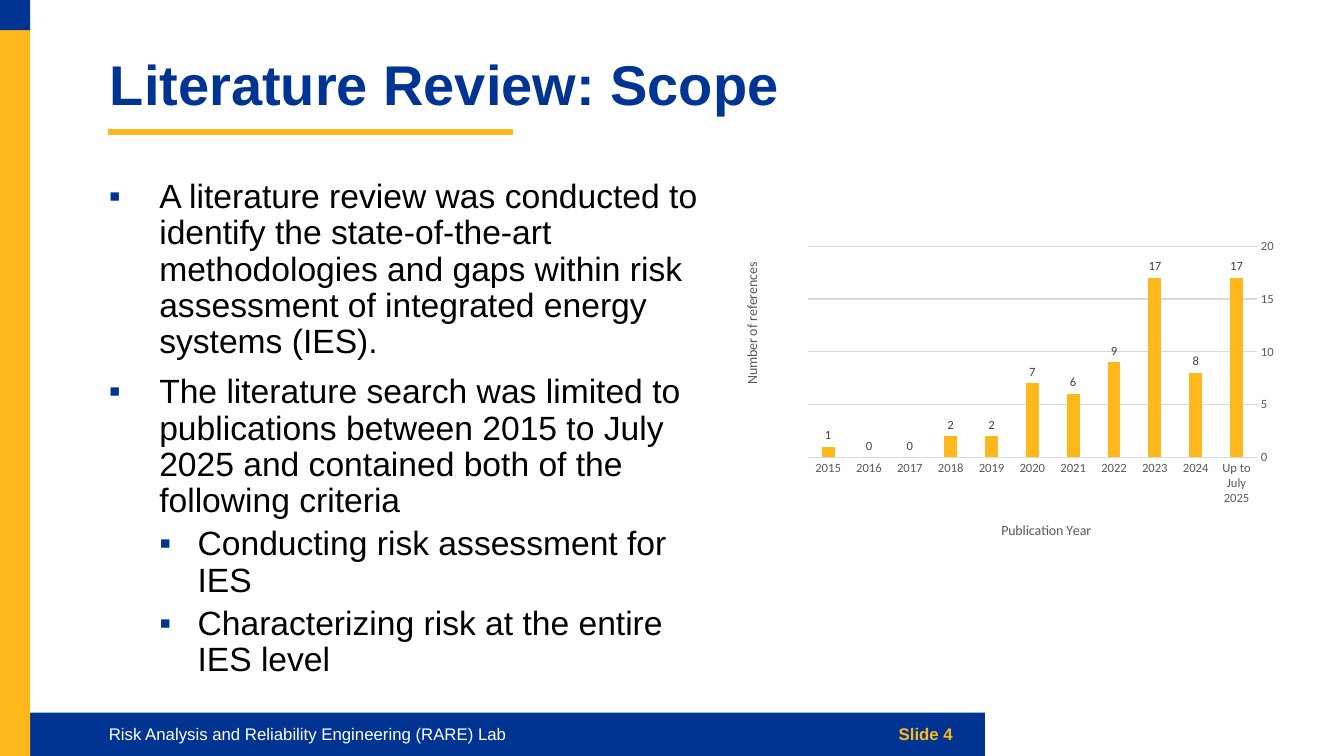
import pptx
import pptx.chart.data
import pptx.dml.color
import pptx.enum.chart
import pptx.enum.shapes
import pptx.enum.text
import pptx.oxml
import pptx.oxml.ns
import pptx.util
from pptx.util import Inches, Pt

RGBColor = pptx.dml.color.RGBColor
BLUE = RGBColor(0x00, 0x34, 0x93)
GOLD = RGBColor(0xFF, 0xB8, 0x1C)
WHITE = RGBColor(0xFF, 0xFF, 0xFF)
BLACK = RGBColor(0x00, 0x00, 0x00)
GREY = RGBColor(0x59, 0x59, 0x59)
LABEL_GREY = RGBColor(0x40, 0x40, 0x40)
GRID_GREY = RGBColor(0xD9, 0xD9, 0xD9)

TITLE = "Literature Review: Scope"
LAB = "Risk Analysis and Reliability Engineering (RARE) Lab"
SLIDE_LABEL = "Slide 4"
BULLETS = [
    (0, "A literature review was conducted to identify the state-of-the-art methodologies "
        "and gaps within risk assessment of integrated energy systems (IES)."),
    (0, "The literature search was limited to publications between 2015 to July 2025 "
        "and contained both of the following criteria"),
    (1, "Conducting risk assessment for IES"),
    (1, "Characterizing risk at the entire IES level"),
]
INDENTS = [(0.5, -0.5, 10), (0.88, -0.38, 5)]
REFERENCES = [
    ("Up to July 2025", 17), ("2024", 8), ("2023", 17), ("2022", 9), ("2021", 6), ("2020", 7),
    ("2019", 2), ("2018", 2), ("2017", 0), ("2016", 0), ("2015", 1),
]
BANDS = [
    (0.3, 7.07, 9.47, 0.43, BLUE),
    (0, 0.3, 0.3, 7.2, GOLD),
    (0, 0, 0.3, 0.3, BLUE),
]


def add_xml(parent, tag, **attrs):
    child = pptx.oxml.parse_xml(f"<{tag} {pptx.oxml.ns.nsdecls(tag.split(':')[0])}/>")
    for name, value in attrs.items():
        child.set(name, str(value))
    parent.append(child)
    return child


def set_font(font, size, color, name="Arial", bold=False):
    font.size = Pt(size)
    font.name = name
    font.bold = bold
    font.color.rgb = color


def place(shape, left, top, width, height):
    shape.left, shape.top = Inches(left), Inches(top)
    shape.width, shape.height = Inches(width), Inches(height)


def set_frame(tf, anchor, side, edge):
    tf.word_wrap = True
    tf.auto_size = pptx.enum.text.MSO_AUTO_SIZE.NONE
    tf.vertical_anchor = anchor
    tf.margin_left = tf.margin_right = Inches(side)
    tf.margin_top = tf.margin_bottom = Inches(edge)


def set_layout(parent, inner=False, **fractions):
    layout = parent.find(pptx.oxml.ns.qn("c:layout"))
    if layout is None:
        layout = add_xml(parent, "c:layout")
        parent.insert(0, layout)
    for child in list(layout):
        layout.remove(child)
    manual = add_xml(layout, "c:manualLayout")
    if inner:
        add_xml(manual, "c:layoutTarget", val="inner")
    for mode in ("c:xMode", "c:yMode"):
        add_xml(manual, mode, val="edge")
    for key, value in fractions.items():
        add_xml(manual, f"c:{key}", val=value)


def add_label(s, text, box, size, color, align, side, edge, bold=False):
    tf = s.shapes.add_textbox(*map(Inches, box)).text_frame
    set_frame(tf, pptx.enum.text.MSO_ANCHOR.MIDDLE, side, edge)
    p = tf.paragraphs[0]
    p.text = text
    p.alignment = align
    set_font(p.runs[0].font, size, color, bold=bold)


def add_bands(s):
    for left, top, width, height, color in BANDS:
        sp = s.shapes.add_shape(pptx.enum.shapes.MSO_SHAPE.RECTANGLE,
                                *map(Inches, (left, top, width, height)))
        sp.shadow.inherit = False
        sp.fill.solid()
        sp.fill.fore_color.rgb = color
        sp.line.fill.background()
    rule = s.shapes.add_connector(pptx.enum.shapes.MSO_CONNECTOR.STRAIGHT,
                                  *map(Inches, (1.07, 1.31, 5.09, 1.31)))
    rule.line.color.rgb = GOLD
    rule.line.width = Pt(4)
    add_xml(rule._element.spPr, "a:effectLst")


def add_title(s):
    place(s.shapes.title, 1.09, 0.52, 11.76, 0.78)
    tf = s.shapes.title.text_frame
    set_frame(tf, pptx.enum.text.MSO_ANCHOR.TOP, 0, 0.05)
    p = tf.paragraphs[0]
    p.text = TITLE
    p.alignment = pptx.enum.text.PP_ALIGN.LEFT
    p.line_spacing = 0.9
    set_font(p.runs[0].font, 40, BLUE, bold=True)


def add_bullets(s):
    body = s.placeholders[1]
    place(body, 1.08, 1.73, 5.89, 5.1)
    tf = body.text_frame
    set_frame(tf, pptx.enum.text.MSO_ANCHOR.TOP, 0, 0.05)
    for i, (level, text) in enumerate(BULLETS):
        p = tf.add_paragraph() if i else tf.paragraphs[0]
        p.text = text
        p.level = level
        margin, indent, before = INDENTS[level]
        pPr = p._p.get_or_add_pPr()
        pPr.set("marL", str(Inches(margin)))
        pPr.set("indent", str(Inches(indent)))
        add_xml(add_xml(pPr, "a:buClr"), "a:srgbClr", val=BLUE)
        add_xml(pPr, "a:buFont", typeface="Arial")
        add_xml(pPr, "a:buChar", char="▪")
        p.line_spacing = 0.9
        p.space_before = Pt(before if i else 0)
        set_font(p.runs[0].font, 24, BLACK)


def format_axis(axis, title, x, y):
    axis.major_tick_mark = axis.minor_tick_mark = pptx.enum.chart.XL_TICK_MARK.NONE
    set_font(axis.tick_labels.font, 9, GREY, "Calibri")
    tf = axis.axis_title.text_frame
    tf.text = title
    set_font(tf.paragraphs[0].runs[0].font, 10, GREY, "Calibri")
    set_layout(axis.axis_title._element, x=x, y=y)


def add_chart(s):
    data = pptx.chart.data.CategoryChartData()
    data.categories = [year for year, count in REFERENCES]
    data.add_series("Series 1", [count for year, count in REFERENCES])
    chart = s.shapes.add_chart(pptx.enum.chart.XL_CHART_TYPE.COLUMN_CLUSTERED,
                               *map(Inches, (7.12, 2.24, 5.57, 3.38)), data).chart
    chart.has_legend = False
    chart.has_title = False
    set_font(chart.font, 10, BLACK, "Calibri")

    years, counts = chart.category_axis, chart.value_axis
    format_axis(years, "Publication Year", 0.5, 0.86)
    years.reverse_order = True
    years.format.line.color.rgb = GRID_GREY
    years.format.line.width = Pt(0.75)
    format_axis(counts, "Number of references", 0.04, 0.1)
    counts.axis_title.text_frame._txBody.bodyPr.set("rot", "-5400000")
    counts.minimum_scale, counts.maximum_scale, counts.major_unit = 0, 20, 5
    counts.format.line.fill.background()
    grid = counts.major_gridlines.format.line
    grid.color.rgb = GRID_GREY
    grid.width = Pt(0.75)

    plot = chart.plots[0]
    plot.vary_by_categories = False
    plot.gap_width, plot.overlap = 219, -27
    fill = plot.series[0].format.fill
    fill.solid()
    fill.fore_color.rgb = GOLD
    labels = plot.series[0].data_labels
    labels.show_value = True
    labels.position = pptx.enum.chart.XL_LABEL_POSITION.OUTSIDE_END
    set_font(labels.font, 9, LABEL_GREY, "Calibri")
    set_layout(chart._chartSpace.chart.plotArea, inner=True, x=0.16, y=0.06, w=0.8, h=0.62)


def main():
    prs = pptx.Presentation()
    prs.slide_width, prs.slide_height = Inches(13.33), Inches(7.5)
    s = prs.slides.add_slide(prs.slide_layouts[1])
    add_bands(s)
    add_title(s)
    add_label(s, LAB, (1.08, 7.07, 8.69, 0.41), 12, WHITE,
              pptx.enum.text.PP_ALIGN.LEFT, 0, 0)
    add_bullets(s)
    add_label(s, SLIDE_LABEL, (6.55, 7.08, 3, 0.4), 12, GOLD,
              pptx.enum.text.PP_ALIGN.RIGHT, 0.1, 0.05, bold=True)
    add_chart(s)
    prs.save("out.pptx")


if __name__ == "__main__":
    main()
